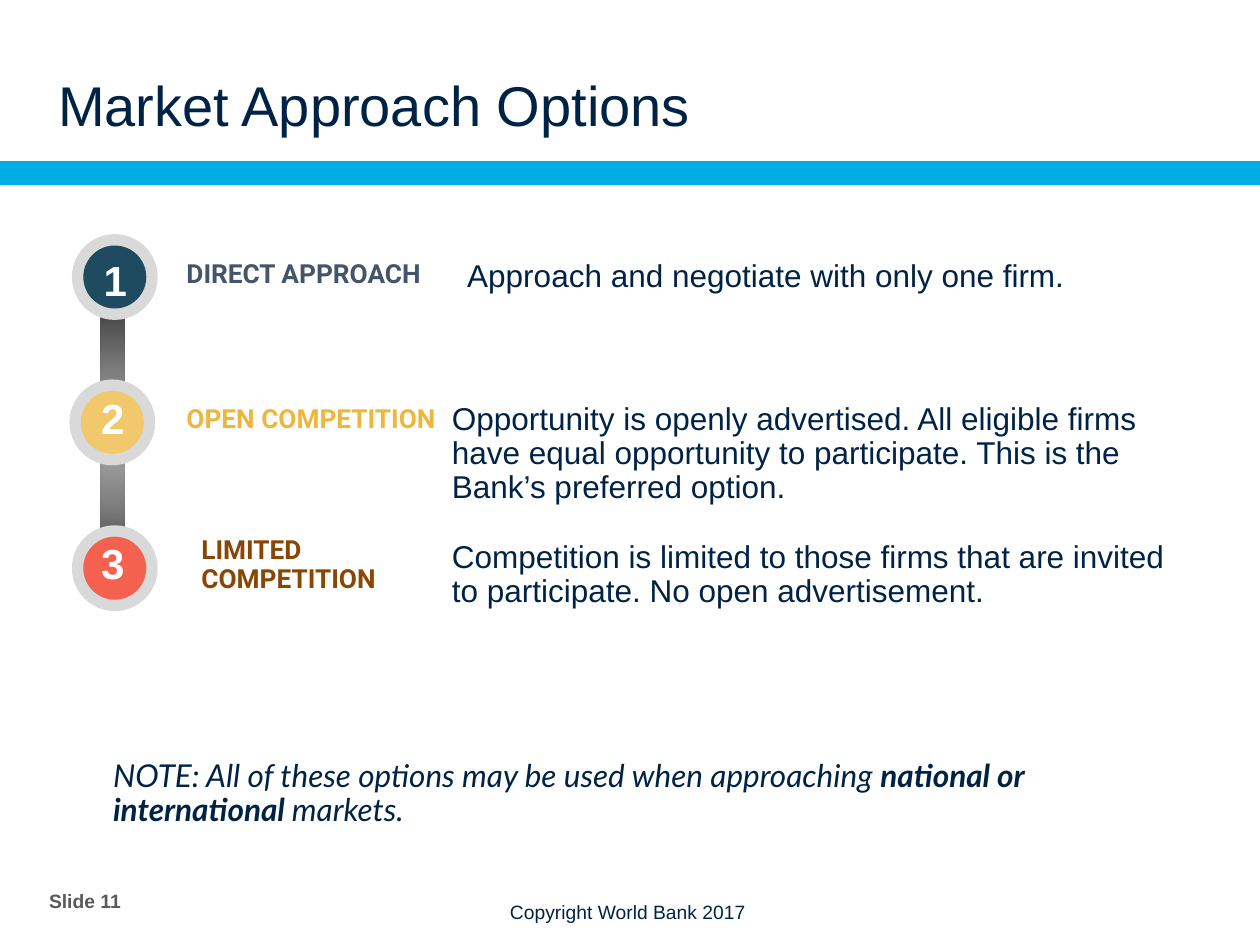
"""Build the Market Approach Options slide with three numbered options."""
from lxml import etree
from pptx import Presentation
from pptx.dml.color import RGBColor
from pptx.enum.shapes import MSO_SHAPE
from pptx.enum.text import MSO_ANCHOR, MSO_AUTO_SIZE, PP_ALIGN
from pptx.oxml import parse_xml
from pptx.oxml.ns import nsdecls, qn
from pptx.util import Cm, Pt

NAVY = RGBColor(0x00, 0x23, 0x45)
SKY = RGBColor(0x00, 0xAD, 0xE4)
GRAY = RGBColor(0x59, 0x59, 0x59)
RING = RGBColor(0xD9, 0xD9, 0xD9)
WHITE = RGBColor(0xFF, 0xFF, 0xFF)
SLATE = RGBColor(0x44, 0x54, 0x6A)
TEAL = RGBColor(0x1F, 0x4B, 0x60)
GOLD = RGBColor(0xED, 0xB7, 0x3F)
YELLOW = RGBColor(0xF1, 0xC9, 0x6C)
BROWN = RGBColor(0x8A, 0x46, 0x05)
CORAL = RGBColor(0xF4, 0x61, 0x4E)

BADGE_SIZE = 1.73
DISC_SIZE = 1.27
DISC_INSET = (BADGE_SIZE - DISC_SIZE) / 2


def add_shape(shapes, kind, left, top, width, height, color):
    shape = shapes.add_shape(kind, Cm(left), Cm(top), Cm(width), Cm(height))
    shape.shadow.inherit = False
    shape.fill.solid()
    shape.fill.fore_color.rgb = color
    shape.line.fill.background()
    return shape


def add_text(box, runs, size, color, name="Arial", italic=False, spacing=0.9):
    left, top, width, height = box
    shape = slide.shapes.add_textbox(Cm(left), Cm(top), Cm(width), Cm(height))
    frame = shape.text_frame
    frame.word_wrap = True
    frame.auto_size = MSO_AUTO_SIZE.SHAPE_TO_FIT_TEXT
    frame.vertical_anchor = MSO_ANCHOR.MIDDLE
    paragraph = frame.paragraphs[0]
    paragraph.line_spacing = spacing
    for text, bold in runs:
        run = paragraph.add_run()
        run.text = text
        run.font.name = name
        run.font.size = Pt(size)
        run.font.color.rgb = color
        run.font.bold = bold
        run.font.italic = italic
    return shape


presentation = Presentation()
presentation.slide_width = Cm(25.4)
presentation.slide_height = Cm(19.05)
slide = presentation.slides.add_slide(presentation.slide_layouts[5])

title = slide.shapes.title
title.left, title.top = Cm(1.17), Cm(0.66)
title.width, title.height = Cm(23.5), Cm(2.11)
title_frame = title.text_frame
title_frame.vertical_anchor = MSO_ANCHOR.BOTTOM
title_frame.margin_left = title_frame.margin_right = 0
title_frame.margin_top = title_frame.margin_bottom = 0
title_paragraph = title_frame.paragraphs[0]
title_paragraph.alignment = PP_ALIGN.LEFT
title_run = title_paragraph.add_run()
title_run.text = "Market Approach Options"
title_run.font.name = "Arial"
title_run.font.size = Pt(32)
title_run.font.color.rgb = NAVY

add_shape(slide.shapes, MSO_SHAPE.RECTANGLE, 0, 3.25, 25.4, 0.48, SKY)

bar = add_shape(slide.shapes, MSO_SHAPE.RECTANGLE, 2.03, 6.17, 0.48, 5.33, GRAY)
gradient = parse_xml(f'<a:gradFill {nsdecls("a")} rotWithShape="1"/>')
stops = etree.SubElement(gradient, qn("a:gsLst"))
for position, shade in ((7, "A6A6A6"), (48, "808080"), (100, "404040")):
    stop = etree.SubElement(stops, qn("a:gs"), pos=str(position * 1000))
    etree.SubElement(stop, qn("a:srgbClr"), val=shade)
circle = etree.SubElement(gradient, qn("a:path"), attrib={"path": "circle"})
etree.SubElement(circle, qn("a:fillToRect"), l="50000", t="50000", r="50000", b="50000")
solid = bar.element.spPr.find(qn("a:solidFill"))
bar.element.spPr.replace(solid, gradient)

options = (
    ("1", (1.45, 4.72), TEAL, (1.78, 5.11),
     "DIRECT APPROACH", SLATE, (3.51, 5.13, 5.77, 0.84),
     "Approach and negotiate with only one firm.", (9.17, 5.13, 15.49, 0.94)),
    ("2", (1.4, 7.65), YELLOW, (1.73, 7.9),
     "OPEN COMPETITION", GOLD, (3.51, 8.05, 5.77, 0.84),
     "Opportunity is openly advertised. All eligible firms have equal opportunity "
     "to participate. This is the Bank’s preferred option.", (8.86, 7.98, 15.49, 2.34)),
    ("3", (1.45, 10.59), CORAL, (1.73, 10.82),
     "LIMITED COMPETITION", BROWN, (3.81, 10.69, 5.77, 1.42),
     "Competition is limited to those firms that are invited to participate. "
     "No open advertisement.", (8.86, 10.77, 15.49, 1.65)),
)
for (number, (left, top), disc_color, number_corner,
     label, label_color, label_box, description, description_box) in options:
    badge = slide.shapes.add_group_shape()
    add_shape(badge.shapes, MSO_SHAPE.OVAL, left, top, BADGE_SIZE, BADGE_SIZE, RING)
    add_shape(badge.shapes, MSO_SHAPE.OVAL, left + DISC_INSET, top + DISC_INSET,
              DISC_SIZE, DISC_SIZE, disc_color)
    digit = add_text((*number_corner, 1.09, 1.17), [(number, True)], 24, WHITE)
    digit.text_frame.paragraphs[0].alignment = PP_ALIGN.CENTER
    add_text(label_box, [(label, True)], 15, label_color, name="Roboto")
    add_text(description_box, [(description, False)], 18, NAVY)

note_runs = [
    ("NOTE: All of these options may be used when approaching ", False),
    ("national or international ", True),
    ("markets.", False),
]
add_text((2.03, 15.18, 21.16, 1.65), note_runs, 18, NAVY, name="Lato", italic=True)

slide_number = add_text((0.99, 17.65, 1.75, 1.02), [("Slide 11", True)], 11, GRAY, spacing=1)
number_frame = slide_number.text_frame
number_frame.auto_size = MSO_AUTO_SIZE.NONE
number_frame.margin_left = number_frame.margin_right = 0
number_frame.margin_top = number_frame.margin_bottom = 0

copyright_line = add_text((10.03, 18.01, 5.41, 0.74), [("Copyright World Bank 2017", False)],
                          11, NAVY, spacing=1)
copyright_line.text_frame.word_wrap = False

presentation.save("out.pptx")
